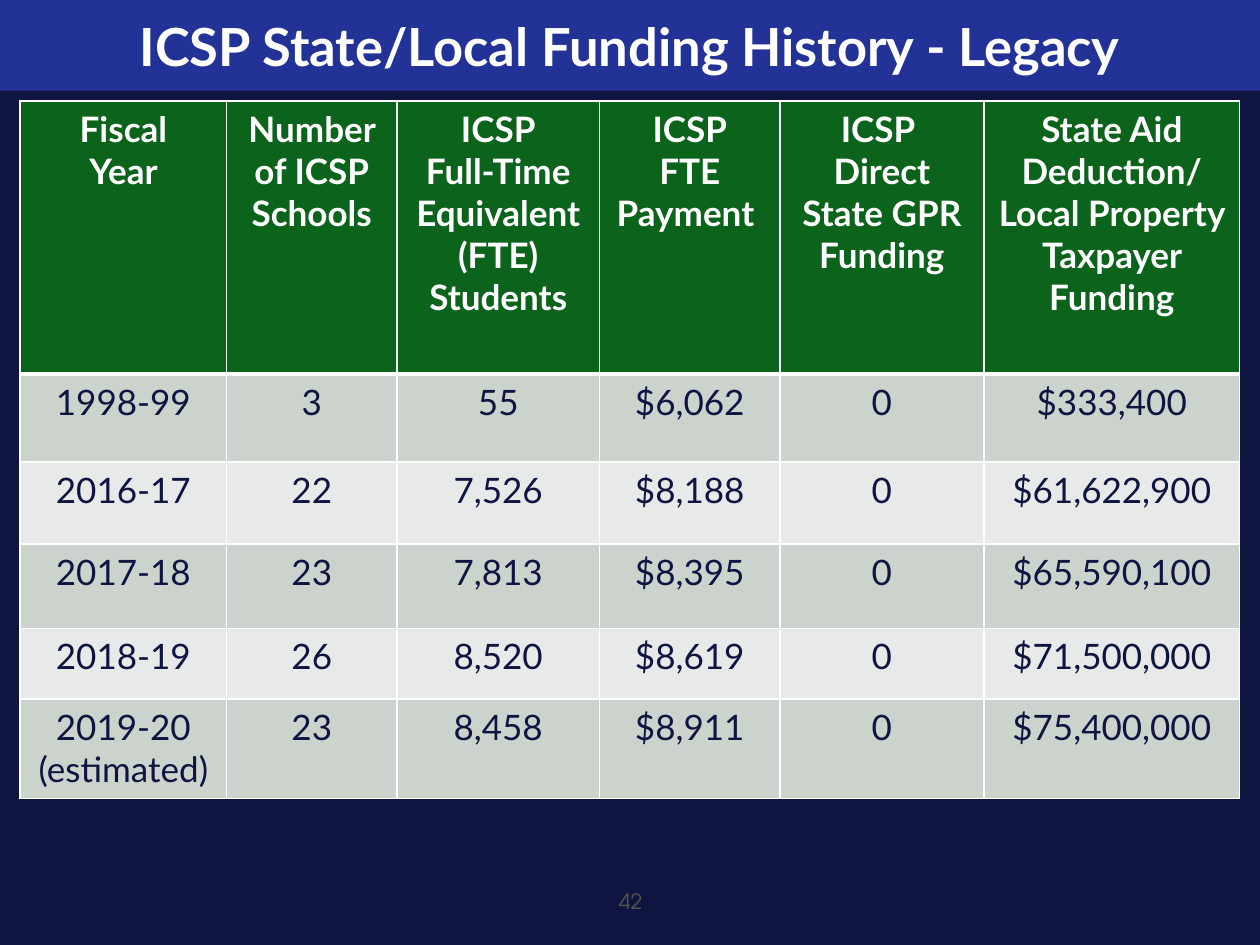
"""Build the ICSP funding history slide: a title band, a funding table and a page number."""
from lxml import etree
from pptx import Presentation
from pptx.dml.color import RGBColor
from pptx.enum.text import MSO_ANCHOR, MSO_AUTO_SIZE, PP_ALIGN
from pptx.oxml.ns import qn
from pptx.util import Inches, Pt

CENTER = PP_ALIGN.CENTER
MIDDLE = MSO_ANCHOR.MIDDLE
NO_FIT = MSO_AUTO_SIZE.NONE
TITLE_ONLY = 5

THEME = {
    "background": "0F1540",
    "band": "233297",
    "header": "0C631B",
    "stripes": ("CCD3CD", "E7EAE8"),
    "rule": "FFFFFF",
    "thin": 1,
    "thick": 3,
    "title": {"name": "Lato", "size": Pt(30), "bold": True, "color": "FFFFFF"},
    "heading": {"name": "Lato", "size": Pt(20), "bold": True, "color": "FFFFFF"},
    "figure": {"name": "Lato", "size": Pt(20), "bold": False, "color": "0F1540"},
    "page": {"name": "TeX Gyre Adventor", "size": Pt(12), "bold": False, "color": "59564B"},
}

COLUMN_SHARES = (16.4, 13.5, 16.1, 14.3, 16.2, 20.3)
ROW_SHARES = (28.9, 9.3, 8.7, 8.9, 7.5, 10.5)
FUNDING = (
    (
        "Fiscal\nYear",
        "Number of ICSP\nSchools",
        "ICSP\nFull-Time\nEquivalent (FTE)\n Students ",
        "ICSP\nFTE Payment ",
        "ICSP \nDirect State GPR Funding",
        "State Aid Deduction/\nLocal Property Taxpayer Funding",
    ),
    ("1998-99", "3", "55", "$6,062", "0", "$333,400"),
    ("2016-17", "22", "7,526", "$8,188", "0", "$61,622,900"),
    ("2017-18", "23", "7,813", "$8,395", "0", "$65,590,100"),
    ("2018-19", "26", "8,520", "$8,619", "0", "$71,500,000"),
    ("2019-20\v(estimated)", "23", "8,458", "$8,911", "0", "$75,400,000"),
)

deck = Presentation()
deck.slide_width, deck.slide_height = Inches(10), Inches(7.5)


def place(left, top, width, height):
    """Turn percentages of the slide into a box in EMU."""
    across, down = deck.slide_width / 100, deck.slide_height / 100
    return [round(v) for v in (left * across, top * down, width * across, height * down)]


def write(frame, text, style):
    """Fill a text frame with centred paragraphs in one style."""
    frame.text = text
    for paragraph in frame.paragraphs:
        paragraph.alignment = CENTER
        for run in paragraph.runs:
            for key, value in style.items():
                if key == "color":
                    run.font.color.rgb = RGBColor.from_string(value)
                else:
                    setattr(run.font, key, value)


slide = deck.slides.add_slide(deck.slide_layouts[TITLE_ONLY])
slide.background.fill.solid()
slide.background.fill.fore_color.rgb = RGBColor.from_string(THEME["background"])

heading = slide.shapes.title
heading.left, heading.top, heading.width, heading.height = place(0, 0, 100, 9.6)
heading.fill.solid()
heading.fill.fore_color.rgb = RGBColor.from_string(THEME["band"])
write(heading.text_frame, "ICSP State/Local Funding History - Legacy", THEME["title"])
heading.text_frame.auto_size = NO_FIT
heading.text_frame.vertical_anchor = MIDDLE

history = slide.shapes.add_table(
    len(ROW_SHARES), len(COLUMN_SHARES),
    *place(1.6, 10.7, sum(COLUMN_SHARES), sum(ROW_SHARES)),
).table
for column, share in zip(history.columns, COLUMN_SHARES):
    column.width = place(0, 0, share, 0)[2]
for row, share in zip(history.rows, ROW_SHARES):
    row.height = place(0, 0, 0, share)[3]

for r, record in enumerate(FUNDING):
    background = THEME["stripes"][(r - 1) % 2] if r else THEME["header"]
    style = THEME["figure"] if r else THEME["heading"]
    for c, entry in enumerate(record):
        cell = history.cell(r, c)
        write(cell.text_frame, entry, style)
        properties = cell._tc.get_or_add_tcPr()
        for side in ("lnL", "lnR", "lnT", "lnB"):
            under_header = (r, side) in ((0, "lnB"), (1, "lnT"))
            weight = THEME["thick"] if under_header else THEME["thin"]
            border = etree.SubElement(properties, qn(f"a:{side}"), w=str(Pt(weight)))
            paint = etree.SubElement(border, qn("a:solidFill"))
            etree.SubElement(paint, qn("a:srgbClr"), val=THEME["rule"])
        cell.fill.solid()
        cell.fill.fore_color.rgb = RGBColor.from_string(background)

page_number = slide.shapes.add_textbox(*place(34.2, 92.7, 31.7, 5.3)).text_frame
page_number.word_wrap = True
page_number.vertical_anchor = MIDDLE
write(page_number, "42", THEME["page"])

deck.save("out.pptx")
